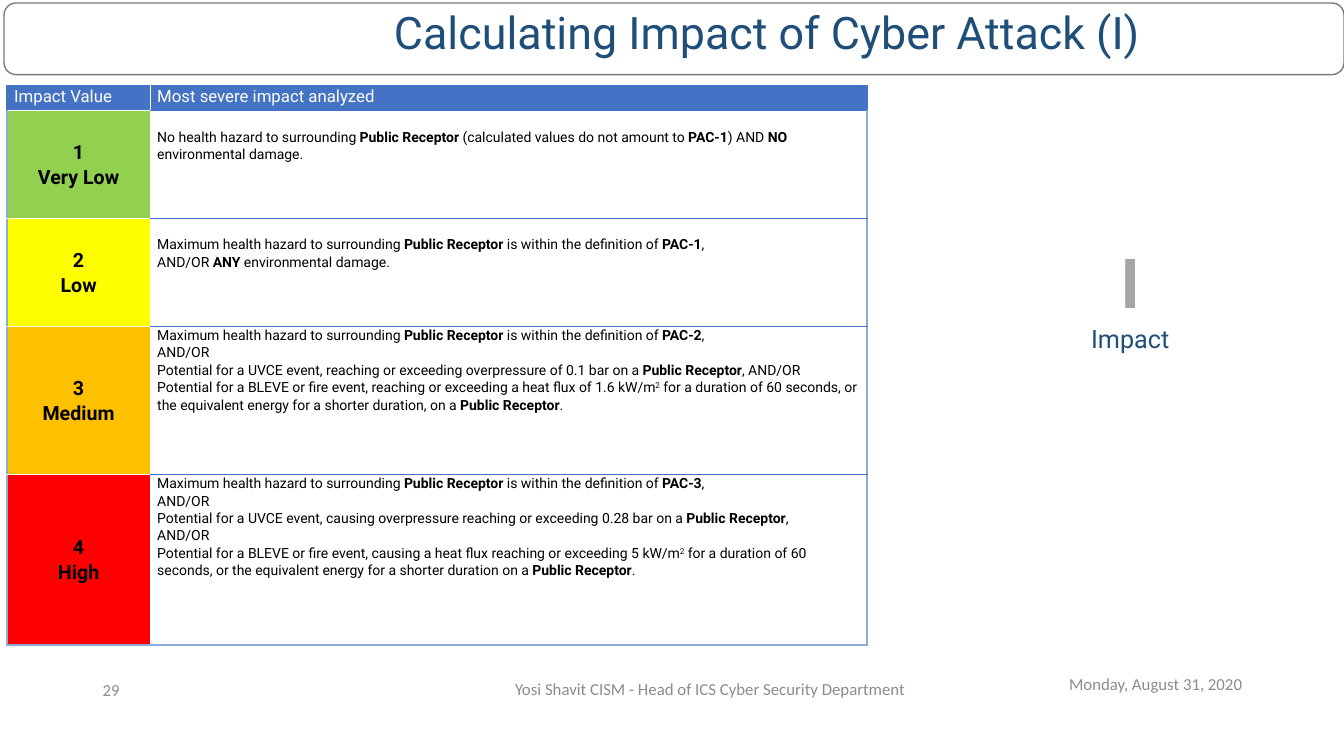
from pptx import Presentation
from pptx.dml.color import RGBColor
from pptx.enum.shapes import MSO_SHAPE
from pptx.enum.text import MSO_ANCHOR, PP_ALIGN
from pptx.oxml import parse_xml
from pptx.oxml.ns import nsdecls
from pptx.util import Inches, Pt

WHITE = RGBColor(0xFF, 0xFF, 0xFF)
BLACK = RGBColor(0x00, 0x00, 0x00)
NAVY = RGBColor(0x1F, 0x4E, 0x79)
BLUE = RGBColor(0x44, 0x72, 0xC4)
PALE = RGBColor(0x8E, 0xAA, 0xDB)
FRAME = RGBColor(0x7A, 0x7A, 0x7A)
GRAY = RGBColor(0x8C, 0x8C, 0x8C)
SILVER = RGBColor(0xA5, 0xA5, 0xA5)
GREEN = RGBColor(0x92, 0xD0, 0x50)
YELLOW = RGBColor(0xFF, 0xFF, 0x00)
AMBER = RGBColor(0xFF, 0xC0, 0x00)
RED = RGBColor(0xFF, 0x00, 0x00)

WIDTHS = [1.42, 7.11]
HEIGHTS = [0.25, 1.07, 1.07, 1.47, 1.69]
HEADS = ["Impact Value", "Most severe impact analyzed"]
HAZARD = "Maximum health hazard to surrounding *Public Receptor* is within the definition of "
LEVELS = [
    ("1", "Very Low", GREEN, 0.17, [
        "No health hazard to surrounding *Public Receptor *(calculated values do not "
        "amount to* PAC-1*) AND *NO* environmental damage."]),
    ("2", "Low", YELLOW, 0.17, [
        HAZARD + "*PAC-1*,",
        "AND/OR *ANY* environmental damage."]),
    ("3", "Medium", AMBER, 0, [
        HAZARD + "*PAC-2*,",
        "AND/OR",
        "Potential for a UVCE event, reaching or exceeding overpressure of 0.1 bar on a "
        "*Public Receptor*, AND/OR",
        "Potential for a BLEVE or fire event, reaching or exceeding a heat flux of "
        "1.6 kW/m*^2* for a duration of 60 seconds, or the equivalent energy for a "
        "shorter duration, on a *Public Receptor*."]),
    ("4", "High", RED, 0, [
        HAZARD + "*PAC-3*,",
        "AND/OR",
        "Potential for a UVCE event, causing overpressure reaching or exceeding 0.28 bar "
        "on a *Public Receptor*,",
        "AND/OR",
        "Potential for a BLEVE or fire event, causing a heat flux reaching or exceeding "
        "5 kW/m*^2* for a duration of 60 seconds, or the equivalent energy for a shorter "
        "duration on a *Public Receptor*."]),
]


def add_run(para, text, size, color, face="Roboto", bold=False):
    """Add one formatted run; a leading caret raises it."""
    run = para.add_run()
    run.text = text.lstrip("^")
    font = run.font
    font.size, font.name, font.bold = Pt(size), face, bold
    font.color.rgb = color
    if text.startswith("^"):
        run._r.get_or_add_rPr().set("baseline", "30000")


def add_rich(para, text, size, color):
    """Add runs, with the parts between asterisks bold or raised."""
    for place, part in enumerate(text.split("*")):
        if part:
            bold = place % 2 == 1 and not part.startswith("^")
            add_run(para, part, size, color, bold=bold)


def add_text(slide, box, lines, align, anchor=MSO_ANCHOR.MIDDLE):
    """Add a text box whose lines are (text, size, color, face, bold)."""
    frame = slide.shapes.add_textbox(*map(Inches, box)).text_frame
    frame.word_wrap = True
    frame.vertical_anchor = anchor
    for place, line in enumerate(lines):
        para = frame.add_paragraph() if place else frame.paragraphs[0]
        para.alignment = align
        add_run(para, *line)


def set_edges(cell, edges):
    """Draw one-point borders from a dict of side to colour."""
    props = cell._tc.get_or_add_tcPr()
    for side in "LRTB":
        if side in edges:
            props.append(parse_xml(
                f'<a:ln{side} {nsdecls("a")} w="12700"><a:solidFill>'
                f'<a:srgbClr val="{edges[side]}"/></a:solidFill></a:ln{side}>'))


def fill_cell(cell, lines, size, color, fill, edges, align=PP_ALIGN.LEFT, top=0):
    """Set the text, borders and fill of a table cell."""
    set_edges(cell, edges)
    cell.fill.solid()
    cell.fill.fore_color.rgb = fill
    cell.margin_left = cell.margin_right = Inches(0.07)
    cell.margin_top, cell.margin_bottom = Inches(top), 0
    centred = align == PP_ALIGN.CENTER
    cell.vertical_anchor = MSO_ANCHOR.MIDDLE if centred else MSO_ANCHOR.TOP
    frame = cell.text_frame
    for place, line in enumerate(lines):
        para = frame.add_paragraph() if place else frame.paragraphs[0]
        para.alignment = align
        para.line_spacing = 1.07
        add_rich(para, line, size, color)


def add_grid(slide):
    """Add the table of impact levels."""
    size = map(Inches, (0.07, 0.85, sum(WIDTHS), sum(HEIGHTS)))
    table = slide.shapes.add_table(len(HEIGHTS), len(WIDTHS), *size).table
    for col, width in zip(table.columns, WIDTHS):
        col.width = Inches(width)
    for row, height in zip(table.rows, HEIGHTS):
        row.height = Inches(height)
    rims = [dict(L=BLUE, T=BLUE, B=WHITE), dict(T=BLUE, R=BLUE, B=BLUE)]
    for col, (head, rim) in enumerate(zip(HEADS, rims)):
        fill_cell(table.cell(0, col), [head], 12, WHITE, BLUE, rim)
    for row, (value, label, color, top, lines) in enumerate(LEVELS, 1):
        last = row == len(LEVELS)
        rim = dict(L=PALE, T=WHITE, R=WHITE, B=PALE if last else WHITE)
        fill_cell(table.cell(row, 0), [f"*{value}*", f"*{label}*"], 14, BLACK, color,
                  rim, PP_ALIGN.CENTER)
        rim = dict(L=WHITE, T=BLUE, R=PALE, B=PALE if last else BLUE)
        fill_cell(table.cell(row, 1), lines, 10, BLACK, WHITE, rim, top=top)


def add_title(slide, text):
    """Add the rounded title frame and place the title over it."""
    box = map(Inches, (0.04, 0.03, 13.29, 0.71))
    frame = slide.shapes.add_shape(MSO_SHAPE.ROUNDED_RECTANGLE, *box)
    frame.shadow.inherit = False
    frame.fill.solid()
    frame.fill.fore_color.rgb = WHITE
    frame.line.color.rgb = FRAME
    frame.line.width = Pt(1)
    title = slide.shapes.title
    slide.shapes._spTree.append(title._element)
    title.left, title.top, title.width, title.height = map(Inches, (3.72, 0, 7.87, 0.64))
    body = title.text_frame
    body.word_wrap = False
    body.vertical_anchor = MSO_ANCHOR.TOP
    body.margin_right = Inches(0.28)
    para = body.paragraphs[0]
    para.alignment = PP_ALIGN.RIGHT
    add_run(para, text, 32, NAVY)


def main():
    """Build the slide and save it."""
    deck = Presentation()
    deck.slide_width, deck.slide_height = Inches(13.33), Inches(7.5)
    slide = deck.slides.add_slide(deck.slide_layouts[5])
    add_title(slide, "Calculating Impact of Cyber Attack (I)")
    add_grid(slide)
    add_text(slide, (10.55, 2.26, 1.32, 1.31),
             [("I", 54, SILVER, "Calibri", True), ("Impact", 18, NAVY)],
             PP_ALIGN.CENTER, MSO_ANCHOR.TOP)
    notes = [
        ((0.92, 6.64, 3, 0.4), "29", PP_ALIGN.LEFT),
        ((4.92, 6.63, 4.25, 0.4),
         "Yosi Shavit CISM - Head of ICS Cyber Security Department", PP_ALIGN.CENTER),
        ((9.31, 6.58, 3.11, 0.4), "Monday, August 31, 2020", PP_ALIGN.RIGHT),
    ]
    for box, text, align in notes:
        add_text(slide, box, [(text, 12, GRAY, "Calibri")], align)
    deck.save("out.pptx")


if __name__ == "__main__":
    main()
